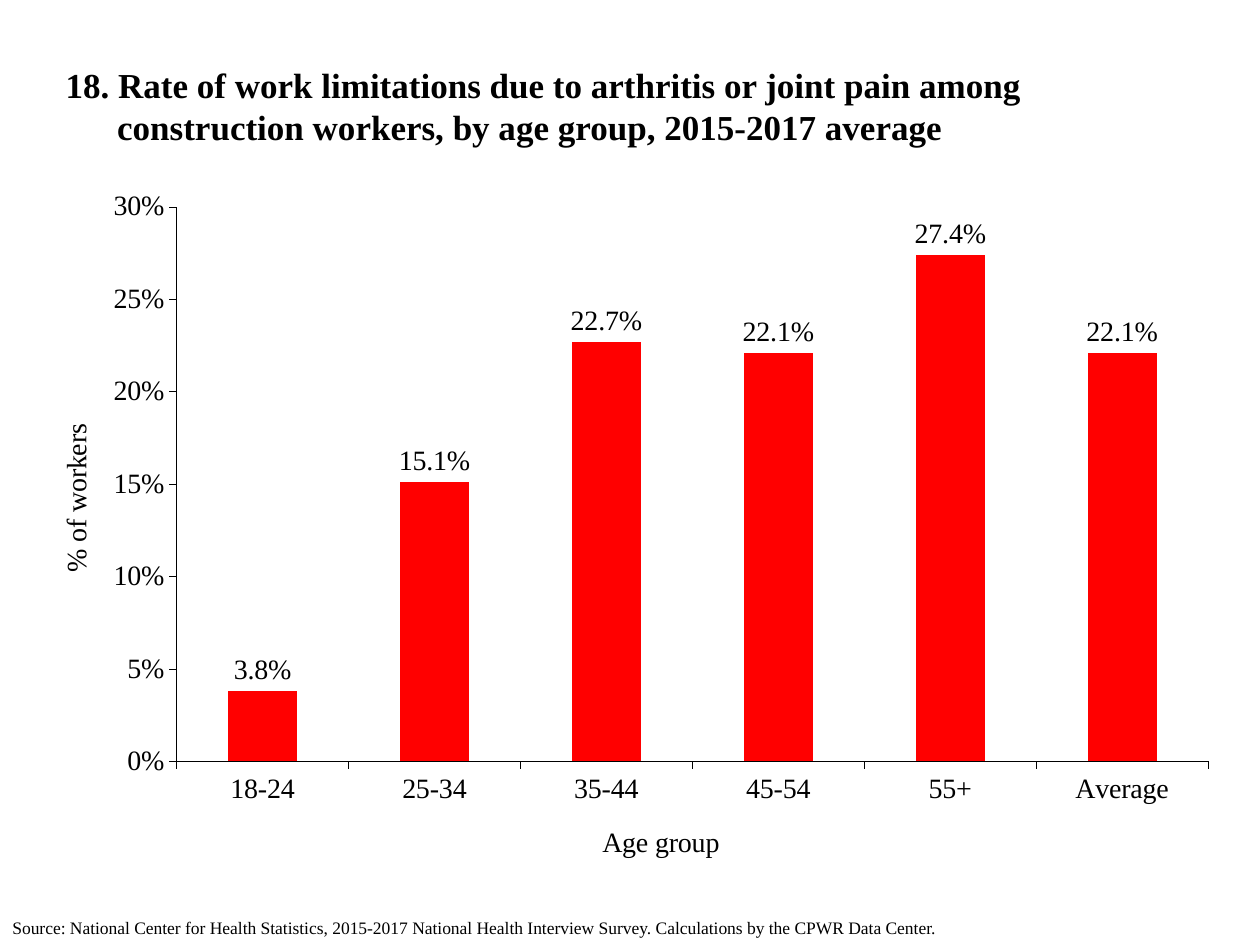
from lxml import etree
from pptx import Presentation
from pptx.chart.data import CategoryChartData
from pptx.dml.color import RGBColor
from pptx.enum.chart import XL_CHART_TYPE, XL_LABEL_POSITION, XL_TICK_MARK
from pptx.enum.text import MSO_ANCHOR, MSO_AUTO_SIZE, PP_ALIGN
from pptx.oxml.ns import qn
from pptx.util import Inches, Pt

BLACK = RGBColor(0, 0, 0)
RED = RGBColor(255, 0, 0)
FONT = "Times New Roman"

MARGIN = 0.42
CONTENT_WIDTH = 9.17
TITLE_BOX = (MARGIN, MARGIN, CONTENT_WIDTH, 0.83)
CHART_BOX = (MARGIN, 1.49, CONTENT_WIDTH, 5.42)
SOURCE_BOX = (0, 7.23, 8.17, 0.27)

LIMITATION_RATES = {
    "18-24": 0.038,
    "25-34": 0.151,
    "35-44": 0.227,
    "45-54": 0.221,
    "55+": 0.274,
    "Average": 0.221,
}


def style_font(font, size, bold=False):
    font.name = FONT
    font.size = Pt(size)
    font.bold = bold
    font.color.rgb = BLACK


def add_title(slide, box):
    title = slide.shapes.title
    title.left, title.top, title.width, title.height = map(Inches, box)
    frame = title.text_frame
    frame.auto_size = MSO_AUTO_SIZE.NONE
    frame.vertical_anchor = MSO_ANCHOR.MIDDLE
    frame.text = ("18. Rate of work limitations due to arthritis or joint pain among"
                  "\vconstruction workers, by age group, 2015-2017 average")
    heading = frame.paragraphs[0]
    heading.alignment = PP_ALIGN.LEFT
    hanging = Inches(0.41)
    properties = heading._p.get_or_add_pPr()
    properties.set("marL", str(hanging))
    properties.set("indent", str(-hanging))
    style_font(heading.font, 20, bold=True)


def style_axis(axis, title):
    axis.has_major_gridlines = False
    axis.major_tick_mark = XL_TICK_MARK.OUTSIDE
    axis.minor_tick_mark = XL_TICK_MARK.NONE
    axis.format.line.color.rgb = BLACK
    axis.format.line.width = Pt(0.25)
    style_font(axis.tick_labels.font, 16)
    axis.axis_title.text_frame.text = title
    style_font(axis.axis_title.text_frame.paragraphs[0].font, 16)


def set_plot_area(chart, x, y, w, h):
    """Fix the inner plot area as shares of the chart's size."""
    plot_area = chart._chartSpace.chart.plotArea
    for old_layout in plot_area.findall(qn("c:layout")):
        plot_area.remove(old_layout)
    layout = etree.Element(qn("c:layout"))
    plot_area.insert(0, layout)
    manual = etree.SubElement(layout, qn("c:manualLayout"))
    settings = {"layoutTarget": "inner", "xMode": "edge", "yMode": "edge",
                "x": x, "y": y, "w": w, "h": h}
    for tag, value in settings.items():
        etree.SubElement(manual, qn(f"c:{tag}")).set("val", str(value))


def add_rate_chart(slide, box):
    data = CategoryChartData(number_format="0.0%")
    data.categories = list(LIMITATION_RATES)
    data.add_series("Series 1", list(LIMITATION_RATES.values()))
    chart = slide.shapes.add_chart(
        XL_CHART_TYPE.COLUMN_CLUSTERED, *map(Inches, box), data).chart
    chart.has_legend = False
    chart.has_title = False
    style_font(chart.font, 16)

    style_axis(chart.category_axis, "Age group")
    rate_axis = chart.value_axis
    style_axis(rate_axis, "% of workers")
    rate_axis.minimum_scale, rate_axis.maximum_scale = 0, 0.3
    rate_axis.major_unit = 0.05
    rate_axis.tick_labels.number_format = "0%"
    rate_axis.tick_labels.number_format_is_linked = False

    plot = chart.plots[0]
    plot.gap_width = 150
    plot.vary_by_categories = False
    rates = plot.series[0]
    rates.format.fill.solid()
    rates.format.fill.fore_color.rgb = RED
    labels = rates.data_labels
    labels.show_value = True
    labels.number_format = "0.0%"
    labels.number_format_is_linked = False
    labels.position = XL_LABEL_POSITION.OUTSIDE_END
    style_font(labels.font, 16)
    set_plot_area(chart, 0.107, 0.028, 0.893, 0.812)


def add_source(slide, box):
    frame = slide.shapes.add_textbox(*map(Inches, box)).text_frame
    frame.word_wrap = True
    frame.auto_size = MSO_AUTO_SIZE.SHAPE_TO_FIT_TEXT
    frame.text = ("Source: National Center for Health Statistics, 2015-2017 National Health "
                  "Interview Survey. Calculations by the CPWR Data Center.")
    style_font(frame.paragraphs[0].font, 10)


def main():
    deck = Presentation()
    deck.slide_width, deck.slide_height = Inches(10), Inches(7.5)
    title_only = deck.slide_layouts[5]
    slide = deck.slides.add_slide(title_only)
    add_title(slide, TITLE_BOX)
    add_rate_chart(slide, CHART_BOX)
    add_source(slide, SOURCE_BOX)
    deck.save("out.pptx")


if __name__ == "__main__":
    main()
